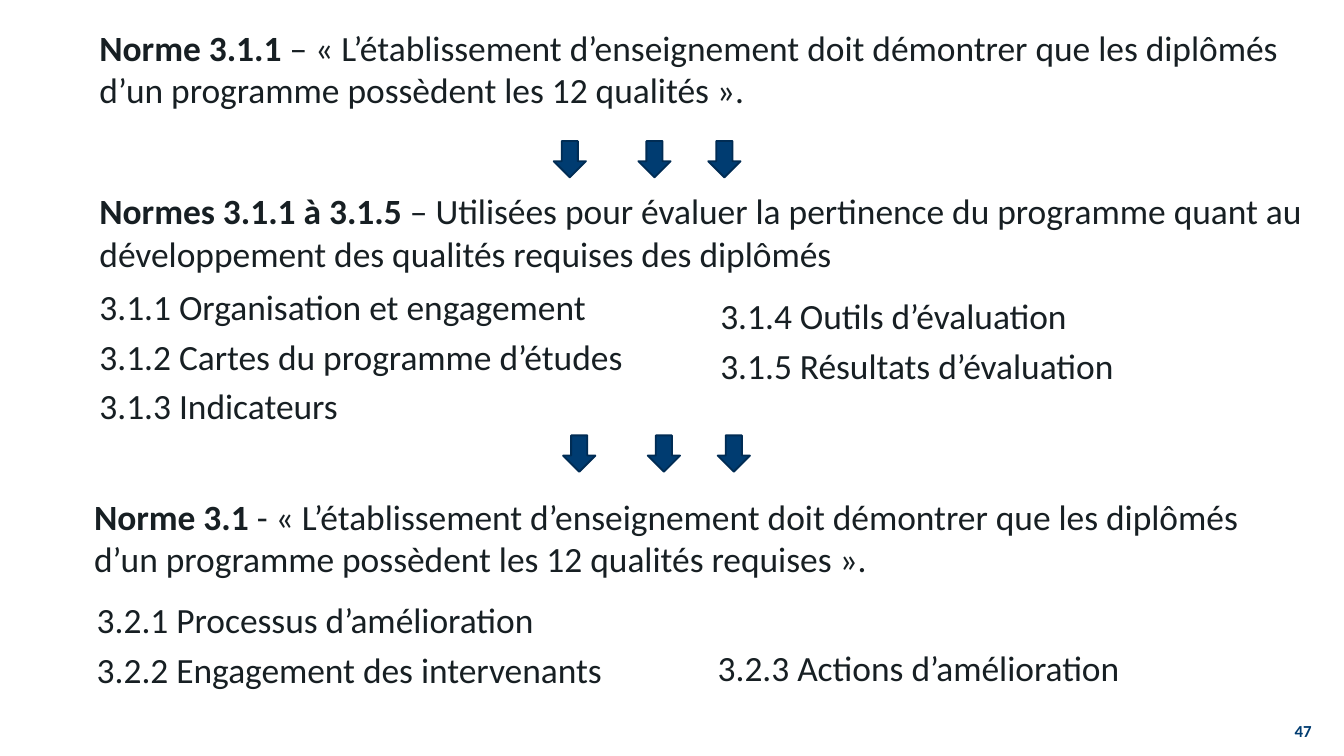
"""Build the slide showing how norms 3.1.1 to 3.1.5 lead to norm 3.1."""
from pptx import Presentation
from pptx import util as u
from pptx.dml.color import RGBColor
from pptx.enum import shapes, text

COLORS = {"ink": "171F23", "navy": "003C71", "navy_edge": "002C54"}

GRADUATE_NORM = (
    "Norme 3.1.1 ",
    "– « L’établissement d’enseignement doit démontrer que les diplômés "
    "d’un programme possèdent les 12 qualités ».")
PROGRAMME_NORM = (
    "Normes 3.1.1 à 3.1.5 ",
    "– Utilisées pour évaluer la pertinence du programme quant au "
    "développement des qualités requises des diplômés")
OVERALL_NORM = (
    "Norme 3.1 ",
    "- « L’établissement d’enseignement doit démontrer que les diplômés "
    "d’un programme possèdent les 12 qualités requises ».")
NORM_BOXES = [
    (0.74, 0.19, 9.04, 1.88, [GRADUATE_NORM, PROGRAMME_NORM]),
    (0.7, 3.68, 8.93, 0.65, [OVERALL_NORM]),
]
CRITERIA = [
    (0.74, 2.12, ["3.1.1 Organisation et engagement",
                  "3.1.2 Cartes du programme d’études",
                  "3.1.3 Indicateurs"]),
    (5.36, 2.19, ["3.1.4 Outils d’évaluation", "3.1.5 Résultats d’évaluation"]),
    (0.72, 4.45, ["3.2.1 Processus d’amélioration",
                  "3.2.2 Engagement des intervenants"]),
    (5.34, 4.81, ["3.2.3 Actions d’amélioration"]),
]
ARROW_ROWS = [(4.12, 1.05), (4.19, 3.24)]
ARROW_OFFSETS = [0, 0.63, 1.15]


def color(name):
    """Return the named colour."""
    return RGBColor.from_string(COLORS[name])


def add_frame(slide, left, top, width, height):
    """Add a wrapping text box without margins and return its text frame."""
    box = slide.shapes.add_textbox(*map(u.Inches, (left, top, width, height)))
    frame = box.text_frame
    frame.word_wrap = True
    frame.margin_left = frame.margin_right = 0
    frame.margin_top = frame.margin_bottom = 0
    return frame


def style(paragraph, size=19, ink="ink"):
    """Set the font of a paragraph."""
    font = paragraph.font
    font.name, font.size = "Calibri", u.Pt(size)
    font.color.rgb = color(ink)


def add_norms(slide, left, top, width, height, norms):
    """Add norms with bold numbers, leaving room for arrows between them."""
    frame = add_frame(slide, left, top, width, height)
    for index, (title, statement) in enumerate(norms):
        paragraph = frame.add_paragraph() if index else frame.paragraphs[0]
        style(paragraph)
        if index:
            paragraph.space_before = u.Pt(42)
        title_run = paragraph.add_run()
        title_run.text = title
        title_run.font.bold = True
        paragraph.add_run().text = statement


def add_criteria(slide, left, top, criteria):
    """Add a column of criteria, one to a line."""
    frame = add_frame(slide, left, top, 4.4, 0.37 * len(criteria))
    frame.text = "\n".join(criteria)
    for index, paragraph in enumerate(frame.paragraphs):
        style(paragraph)
        if index:
            paragraph.space_before = u.Pt(3.8)


def add_arrow_row(slide, left, top):
    """Add a group of three down arrows."""
    row = slide.shapes.add_group_shape()
    for offset in ARROW_OFFSETS:
        arrow = row.shapes.add_shape(
            shapes.MSO_SHAPE.DOWN_ARROW, u.Inches(left + offset), u.Inches(top),
            u.Inches(0.24), u.Inches(0.27))
        arrow.shadow.inherit = False
        arrow.fill.solid()
        arrow.fill.fore_color.rgb = color("navy")
        arrow.line.color.rgb = color("navy_edge")
        arrow.line.width = u.Pt(1)


def add_page_number(slide, number):
    """Add the page number in the lower right corner."""
    frame = add_frame(slide, 9.4, 5.36, 0.36, 0.16)
    frame.vertical_anchor = text.MSO_ANCHOR.MIDDLE
    frame.text = number
    paragraph = frame.paragraphs[0]
    paragraph.alignment = text.PP_ALIGN.RIGHT
    style(paragraph, 9, "navy")
    paragraph.font.bold = True


def main():
    """Build and save the slide."""
    deck = Presentation()
    deck.slide_width, deck.slide_height = u.Inches(10), u.Inches(10 * 9 / 16)
    slide = deck.slides.add_slide(deck.slide_layouts[6])
    add_page_number(slide, "47")
    for norm_box in NORM_BOXES:
        add_norms(slide, *norm_box)
    for column in CRITERIA:
        add_criteria(slide, *column)
    for row in ARROW_ROWS:
        add_arrow_row(slide, *row)
    deck.save("out.pptx")


if __name__ == "__main__":
    main()
